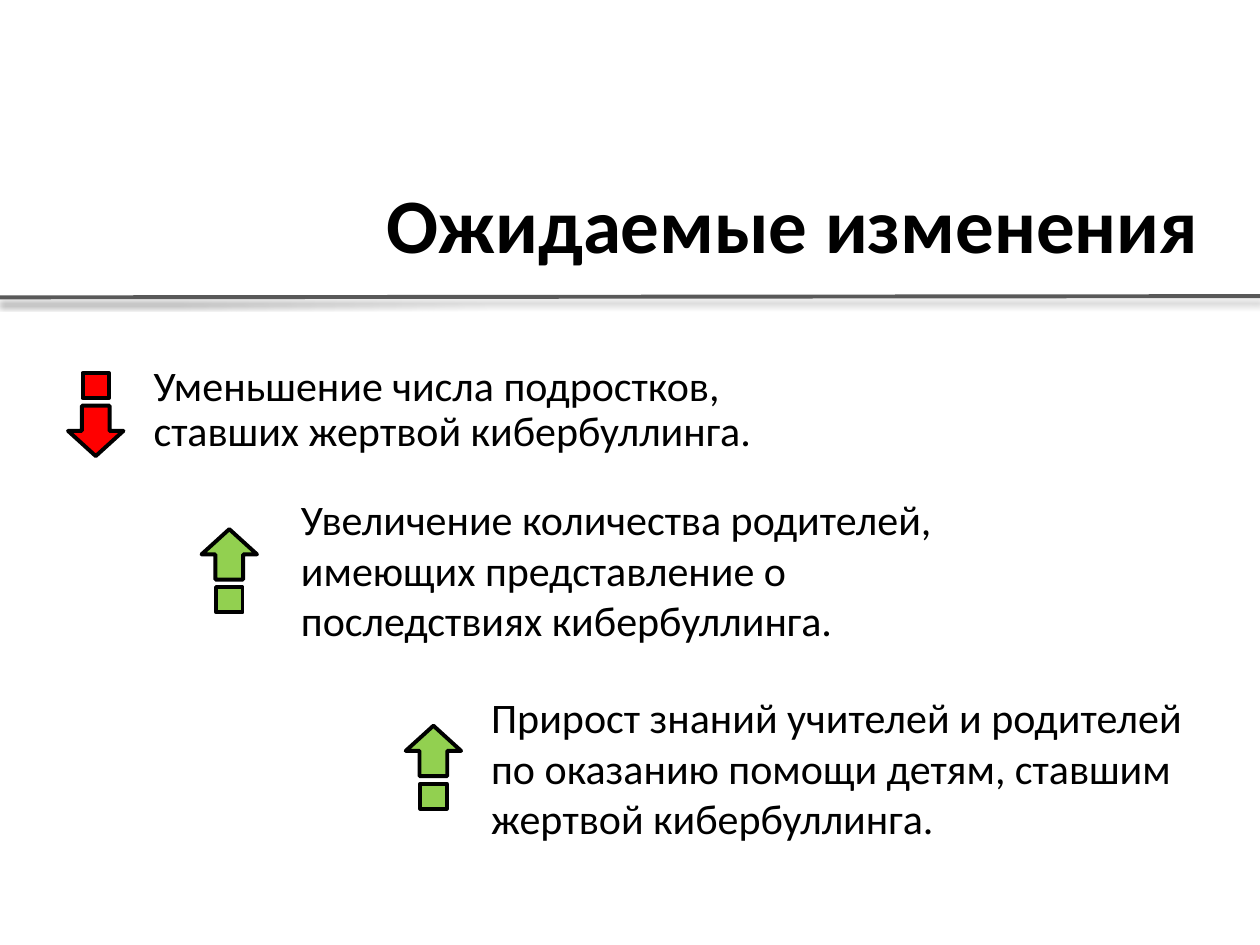
from dataclasses import dataclass

from lxml import etree
from pptx import Presentation
from pptx.dml.color import RGBColor
from pptx.enum.shapes import MSO_CONNECTOR, MSO_SHAPE
from pptx.enum.text import MSO_ANCHOR
from pptx.oxml.ns import qn
from pptx.util import Inches, Pt

DOWN, UP, RECT = MSO_SHAPE.DOWN_ARROW, MSO_SHAPE.UP_ARROW, MSO_SHAPE.RECTANGLE
STRAIGHT = MSO_CONNECTOR.STRAIGHT
TOP, MIDDLE = MSO_ANCHOR.TOP, MSO_ANCHOR.MIDDLE

FONT = "Calibri"
BLACK, GREY, RED, GREEN = "000000", "595959", "FF0000", "92D050"
ARROW_W, ARROW_H = 0.44, 0.4
BLOCK_W, BLOCK_H = 0.21, 0.2
BLOCK_GAP = 0.06


@dataclass
class Label:
    text: str
    left: float
    top: float
    width: float
    height: float
    size: int = 24
    bold: bool = False
    spacing: float = 1.0
    anchor: MSO_ANCHOR = TOP


@dataclass
class Marker:
    left: float
    top: float
    rising: bool


TITLE = Label("Ожидаемые изменения", 2.97, 1.09, 8.62, 1.45,
              size=44, bold=True, spacing=0.9, anchor=MIDDLE)
CHANGES = [
    Label("Уменьшение числа подростков, ставших жертвой кибербуллинга.",
          1.12, 2.85, 5.88, 1.14, spacing=0.9),
    Label("Увеличение количества родителей, имеющих представление о "
          "последствиях кибербуллинга.", 2.29, 3.87, 5.57, 1.31),
    Label("Прирост знаний учителей и родителей по оказанию помощи детям, "
          "ставшим жертвой кибербуллинга.", 3.8, 5.44, 5.73, 1.31),
]
MARKERS = [Marker(0.54, 2.96, False), Marker(1.6, 4.2, True), Marker(3.22, 5.76, True)]


def rgb(value: str) -> RGBColor:
    return RGBColor.from_string(value)


def add_label(s, label: Label) -> None:
    box = s.shapes.add_textbox(Inches(label.left), Inches(label.top),
                               Inches(label.width), Inches(label.height))
    tf = box.text_frame
    tf.word_wrap = True
    tf.vertical_anchor = label.anchor
    p = tf.paragraphs[0]
    p.line_spacing = label.spacing
    r = p.add_run()
    r.text = label.text
    r.font.name = FONT
    r.font.size = Pt(label.size)
    r.font.bold = label.bold
    r.font.color.rgb = rgb(BLACK)


def add_part(group, kind: MSO_SHAPE, left: float, top: float,
             width: float, height: float, color: str) -> None:
    sp = group.shapes.add_shape(kind, Inches(left), Inches(top),
                                Inches(width), Inches(height))
    sp.shadow.inherit = False
    sp.fill.solid()
    sp.fill.fore_color.rgb = rgb(color)
    sp.line.color.rgb = rgb(BLACK)
    sp.line.width = Pt(2.25)


def add_marker(s, marker: Marker) -> None:
    """Draw an arrow with a small block behind its tail."""
    group = s.shapes.add_group_shape()
    color = GREEN if marker.rising else RED
    if marker.rising:
        arrow_top, block_top = marker.top, marker.top + ARROW_H + BLOCK_GAP
    else:
        arrow_top, block_top = marker.top + BLOCK_H + BLOCK_GAP, marker.top
    block_left = marker.left + (ARROW_W - BLOCK_W) / 2
    add_part(group, UP if marker.rising else DOWN, marker.left, arrow_top,
             ARROW_W, ARROW_H, color)
    add_part(group, RECT, block_left, block_top, BLOCK_W, BLOCK_H, color)


def add_divider(s) -> None:
    """Draw the line under the title with a soft shadow below it."""
    line = s.shapes.add_connector(STRAIGHT, Inches(0), Inches(2.36),
                                  Inches(10), Inches(2.35))
    line.line.color.rgb = rgb(GREY)
    line.line.width = Pt(2.25)
    effects = etree.SubElement(line._element.spPr, qn("a:effectLst"))
    shadow = etree.SubElement(effects, qn("a:outerShdw"), blurRad=str(Pt(4)),
                              dist=str(Pt(3)), dir="5400000", rotWithShape="0")
    color = etree.SubElement(shadow, qn("a:srgbClr"), val=BLACK)
    etree.SubElement(color, qn("a:alpha"), val="40000")


def main() -> None:
    prs = Presentation()
    prs.slide_width, prs.slide_height = Inches(10), Inches(7.5)
    s = prs.slides.add_slide(prs.slide_layouts[6])

    # Heading
    add_label(s, TITLE)
    add_divider(s)

    # Expected changes, each with its direction marker
    for label, marker in zip(CHANGES, MARKERS):
        add_label(s, label)
        add_marker(s, marker)

    prs.save("out.pptx")


if __name__ == "__main__":
    main()
